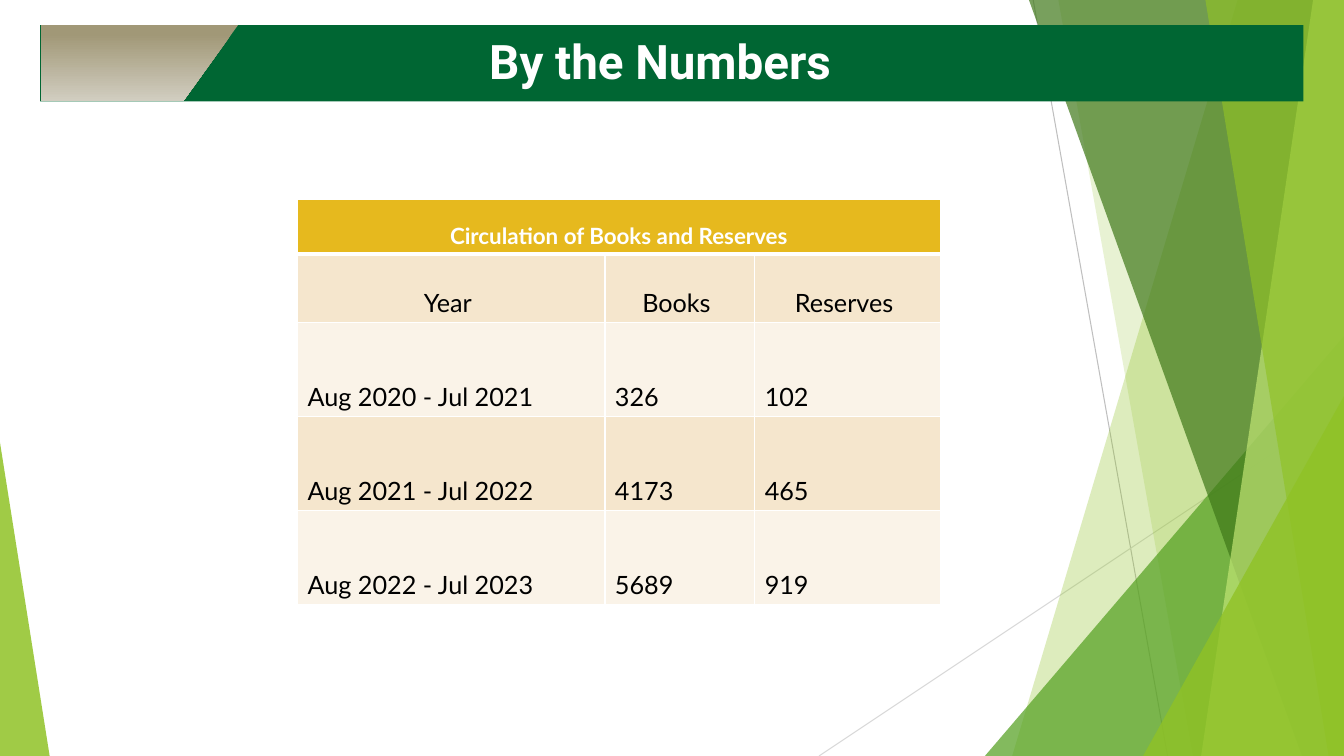
"""Build the "By the Numbers" slide with its circulation table."""
from dataclasses import dataclass

from lxml import etree
from pptx import Presentation
from pptx.dml.color import RGBColor
from pptx.enum.shapes import MSO_CONNECTOR, MSO_SHAPE
from pptx.enum.text import MSO_ANCHOR, PP_ALIGN
from pptx.oxml.ns import qn
from pptx.util import Pt

STRAIGHT = MSO_CONNECTOR.STRAIGHT
RECTANGLE, TRIANGLE = MSO_SHAPE.RECTANGLE, MSO_SHAPE.ISOSCELES_TRIANGLE
LEFT, CENTER = PP_ALIGN.LEFT, PP_ALIGN.CENTER
MIDDLE, BOTTOM = MSO_ANCHOR.MIDDLE, MSO_ANCHOR.BOTTOM


@dataclass(frozen=True)
class Theme:
    white: str = "FFFFFF"
    black: str = "000000"
    lime: str = "90C226"
    pale_lime: str = "C0E474"
    green: str = "54A021"
    dark_green: str = "3F7819"
    banner: str = "006633"
    sand: str = "D1CDC0"
    khaki: str = "A19877"
    gold: str = "E6B91E"
    stripes: tuple = ("F5E6CD", "FAF3E8")
    grays: tuple = ("BFBFBF", "D9D9D9")
    title_font: str = "Roboto"
    body_font: str = "Lato"
    title_size: int = 34
    header_size: int = 16
    body_size: int = 18


theme = Theme()
WIDTH, HEIGHT = 960, 540


def write(frame, text, *, size, color, font=theme.body_font, bold=False, align=LEFT, spacing=1.0):
    para = frame.paragraphs[0]
    para.alignment = align
    para.line_spacing = spacing
    span = para.add_run()
    span.text = text
    span.font.name = font
    span.font.size = Pt(size)
    span.font.bold = bold
    span.font.color.rgb = RGBColor.from_string(color)


def paint(shape, color, opacity=100):
    shape.shadow.inherit = False
    shape.line.fill.background()
    shape.fill.solid()
    shape.fill.fore_color.rgb = RGBColor.from_string(color)
    if opacity < 100:
        color_node = shape.fill._xPr.find(qn("a:solidFill"))[0]
        etree.SubElement(color_node, qn("a:alpha"), val=str(opacity * 1000))


deck = Presentation()
deck.slide_width, deck.slide_height = Pt(WIDTH), Pt(HEIGHT)
page = deck.slides.add_slide(deck.slide_layouts[6])

hairlines = [(738, 0, 834, HEIGHT), (WIDTH, 290, 585, HEIGHT)]
for ends, gray in zip(hairlines, theme.grays):
    hairline = page.shapes.add_connector(STRAIGHT, *map(Pt, ends))
    hairline.line.color.rgb = RGBColor.from_string(gray)
    hairline.line.width = Pt(0.75)
    etree.SubElement(hairline._element.spPr, qn("a:effectLst"))

# fmt: off
facets = [
    ("band", (884.5, 723), theme.lime, 30),
    ("band", (756, 852), theme.lime, 20),
    ("corner", (703.5, 240, 256.5, 1), theme.green, 72),
    ("band", (735, 929.5), theme.dark_green, 70),
    ("band", (938.5, 858), theme.pale_lime, 70),
    ("band", (861, 949), theme.lime, 65),
    ("corner", (816.5, 283, 143.5, 1), theme.lime, 80),
    ("corner", (0, 316, 35.5, 0), theme.lime, 85),
]
# fmt: on
for kind, geometry, color, opacity in facets:
    if kind == "band":
        top_x, bottom_x = geometry
        outline = page.shapes.build_freeform(top_x, -0.5, scale=Pt(1))
        outline.add_line_segments([(WIDTH, -0.5), (WIDTH, HEIGHT), (bottom_x, HEIGHT)])
        facet = outline.convert_to_shape()
    else:
        left, top, width, apex = geometry
        facet = page.shapes.add_shape(TRIANGLE, Pt(left), Pt(top), Pt(width), Pt(HEIGHT - top))
        facet.adjustments[0] = apex
    paint(facet, color, opacity)

banner = page.shapes.add_shape(RECTANGLE, Pt(28.6), Pt(18), Pt(902.4), Pt(54.5))
paint(banner, theme.banner)

title_box = page.shapes.add_textbox(Pt(57.6), Pt(25.2), Pt(828), Pt(41.8))
title_box.text_frame.word_wrap = True
title_box.text_frame.vertical_anchor = MIDDLE
write(title_box.text_frame, "By the Numbers", size=theme.title_size, color=theme.white,
      font=theme.title_font, bold=True, align=CENTER, spacing=0.9)

outline = page.shapes.build_freeform(28.6, 18, scale=Pt(1))
outline.add_line_segments([(170, 18), (131, 72.5), (28.6, 72.5)])
outline.shape_offset_x
wedge = outline.convert_to_shape()
paint(wedge, theme.khaki)
wedge.fill.gradient()
wedge.fill.gradient_angle = 270
for stop, color, position in zip(wedge.fill.gradient_stops, (theme.khaki, theme.sand), (0.12, 1)):
    stop.color.rgb = RGBColor.from_string(color)
    stop.position = position

rows = [
    ("Circulation of Books and Reserves", "", ""),
    ("Year", "Books", "Reserves"),
    ("Aug 2020 - Jul 2021", "326", "102"),
    ("Aug 2021 - Jul 2022", "4173", "465"),
    ("Aug 2022 - Jul 2023", "5689", "919"),
]
column_widths = [219.5, 107, 132.5]
row_heights = [39, 49, 67.2, 67.2, 67.2]
table = page.shapes.add_table(len(rows), len(column_widths), Pt(212.6), Pt(142.6),
                              Pt(sum(column_widths)), Pt(sum(row_heights))).table
for column, width in zip(table.columns, column_widths):
    column.width = Pt(width)
for row, height in zip(table.rows, row_heights):
    row.height = Pt(height)
table.cell(0, 0).merge(table.cell(0, 2))

for row_index, values in enumerate(rows):
    is_header = row_index == 0
    for column_index, value in enumerate(values):
        cell = table.cell(row_index, column_index)
        cell.vertical_anchor = BOTTOM
        cell.fill.solid()
        fill = theme.gold if is_header else theme.stripes[(row_index - 1) % 2]
        cell.fill.fore_color.rgb = RGBColor.from_string(fill)
        if not is_header:
            cell.margin_right = Pt(12)
        if value:
            write(cell.text_frame, value, bold=is_header,
                  size=theme.header_size if is_header else theme.body_size,
                  color=theme.white if is_header else theme.black,
                  align=CENTER if row_index < 2 else LEFT)
        properties = cell._tc.get_or_add_tcPr()
        for order, side in enumerate("LRTB"):
            thick = (row_index, side) in ((0, "B"), (1, "T"))
            border = etree.Element(qn(f"a:ln{side}"), w=str(Pt(3 if thick else 1)))
            border_fill = etree.SubElement(border, qn("a:solidFill"))
            etree.SubElement(border_fill, qn("a:srgbClr"), val=theme.white)
            properties.insert(order, border)

deck.save("out.pptx")
